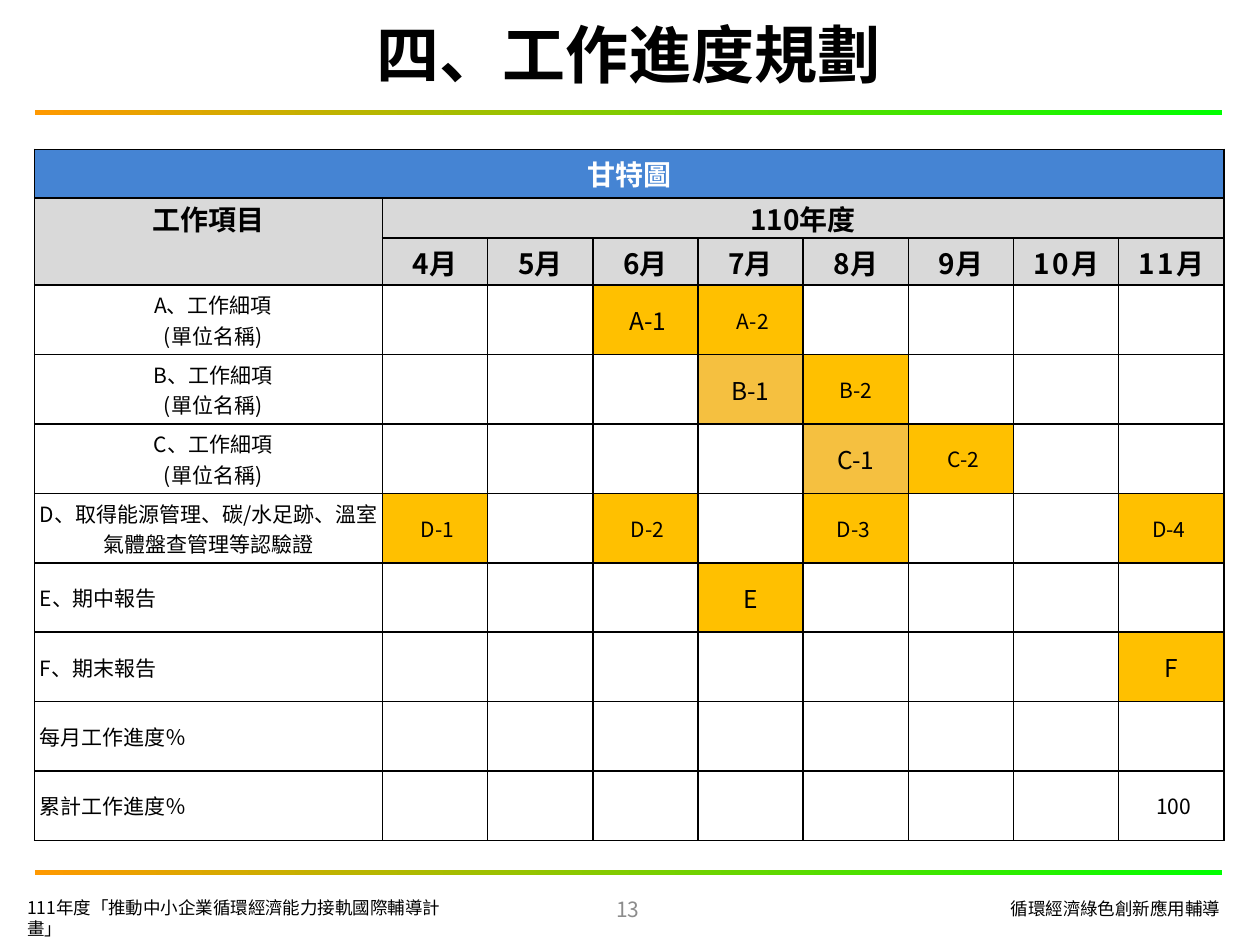
"""Build the work schedule slide with its Gantt table."""
from dataclasses import dataclass
from typing import Optional

import lxml.etree
import pptx
import pptx.dml.color
import pptx.enum.shapes
import pptx.enum.text
import pptx.oxml.ns
import pptx.util

Cm = pptx.util.Cm
Pt = pptx.util.Pt
RGBColor = pptx.dml.color.RGBColor
ALIGN = pptx.enum.text.PP_ALIGN
ANCHOR = pptx.enum.text.MSO_ANCHOR
qn = pptx.oxml.ns.qn

FONT = "Noto Sans CJK SC"
BLACK = RGBColor(0x00, 0x00, 0x00)
WHITE = RGBColor(0xFF, 0xFF, 0xFF)
GRAY = RGBColor(0x8C, 0x8C, 0x8C)
BLUE = RGBColor(0x45, 0x84, 0xD3)
HEADER = RGBColor(0xD9, 0xD9, 0xD9)
GOLD = RGBColor(0xFF, 0xC0, 0x00)
AMBER = RGBColor(0xF5, 0xC0, 0x40)
ORANGE = RGBColor(0xFF, 0x99, 0x00)
GREEN = RGBColor(0x00, 0xFF, 0x00)

ITEM_WIDTH, MONTH_WIDTH = 7.01, 2.12
HEADER_HEIGHTS, TASK_HEIGHT = [0.98, 0.81, 0.95], 1.4
MONTHS = range(4, 12)


@dataclass
class Style:
    size: float
    color: RGBColor = BLACK
    bold: bool = False
    align: ALIGN = ALIGN.CENTER


@dataclass
class Label:
    text: str
    left: float
    top: float
    width: float
    height: float
    style: Style
    anchor: ANCHOR = ANCHOR.TOP


@dataclass
class Mark:
    month: int
    text: str
    size: float = 12
    fill: Optional[RGBColor] = GOLD


@dataclass
class Task:
    name: str
    marks: list[Mark]
    align: ALIGN = ALIGN.LEFT
    indent: float = 0


LABELS = [
    Label("111年度「推動中小企業循環經濟能力接軌國際輔導計畫」", 0.3, 17.96, 9.42, 0.69,
          Style(10, align=ALIGN.LEFT)),
    Label("循環經濟綠色創新應用輔導", 18.69, 17.98, 6.15, 0.69, Style(10, align=ALIGN.RIGHT)),
    Label("四、工作進度規劃", 0, 0.33, 25.35, 1.5, Style(36, bold=True), ANCHOR.MIDDLE),
    Label("13", 9.7, 17.81, 5.92, 1.02, Style(12, GRAY), ANCHOR.MIDDLE),
]

TASKS = [
    Task("A、工作細項\n(單位名稱)", [Mark(6, " A-1", 14), Mark(7, " A-2")], ALIGN.CENTER, 0.18),
    Task("B、工作細項\n(單位名稱)", [Mark(7, "B-1", 14, AMBER), Mark(8, "B-2")], ALIGN.CENTER, 0.18),
    Task("C、工作細項\n(單位名稱)", [Mark(8, "C-1", 14, AMBER), Mark(9, " C-2")], ALIGN.CENTER, 0.18),
    Task("D、取得能源管理、碳/水足跡、溫室氣體盤查管理等認驗證",
         [Mark(4, " D-1"), Mark(6, " D-2"), Mark(8, "D-3 "), Mark(11, "D-4 ")], ALIGN.CENTER),
    Task("E、期中報告", [Mark(7, "E", 14)]),
    Task("F、期末報告", [Mark(11, "F", 14)]),
    Task("每月工作進度％", []),
    Task("累計工作進度％", [Mark(11, " 100", fill=None)]),
]


def format_text(tf, style: Style) -> None:
    for p in tf.paragraphs:
        p.alignment = style.align
        for r in p.runs:
            r.font.name = FONT
            r.font.size = Pt(style.size)
            r.font.bold = style.bold
            r.font.color.rgb = style.color
            latin = r.font._element.find(qn("a:latin"))
            ea = lxml.etree.Element(qn("a:ea"), typeface=FONT)
            latin.addnext(ea)


def add_label(s, label: Label) -> None:
    sp = s.shapes.add_textbox(Cm(label.left), Cm(label.top), Cm(label.width), Cm(label.height))
    tf = sp.text_frame
    tf.word_wrap = True
    tf.vertical_anchor = label.anchor
    tf.text = label.text
    format_text(tf, label.style)


def add_rule(s, top: float) -> None:
    sp = s.shapes.add_shape(pptx.enum.shapes.MSO_SHAPE.RECTANGLE,
                            Cm(0.71), Cm(top), Cm(23.93), Cm(0.12))
    sp.shadow.inherit = False
    sp.line.fill.background()
    sp.fill.gradient()
    sp.fill.gradient_angle = 0
    for stop, color in zip(sp.fill.gradient_stops, (ORANGE, GREEN)):
        stop.color.rgb = color


def prepare_cell(cell, row: int) -> None:
    compact = row == 1
    cell.margin_left = cell.margin_right = Cm(0 if compact else 0.1)
    cell.margin_top = cell.margin_bottom = Cm(0 if compact else 0.08)
    cell.vertical_anchor = ANCHOR.TOP if compact else ANCHOR.MIDDLE
    tcPr = cell._tc.get_or_add_tcPr()
    for side in ("lnL", "lnR", "lnT", "lnB"):
        ln = lxml.etree.SubElement(tcPr, qn("a:" + side), w=str(Pt(1)))
        fill = lxml.etree.SubElement(ln, qn("a:solidFill"))
        lxml.etree.SubElement(fill, qn("a:srgbClr"), val=str(BLACK))
    cell.fill.background()


def write_cell(cell, text: str, style: Style, fill: Optional[RGBColor] = None) -> None:
    cell.text_frame.text = text
    format_text(cell.text_frame, style)
    if fill is not None:
        cell.fill.solid()
        cell.fill.fore_color.rgb = fill


def write_month(cell, month: int, style: Style) -> None:
    write_cell(cell, f"{month}月", style, HEADER)
    if month >= 10:
        p = cell.text_frame.paragraphs[0]
        p.text = str(month)
        p.add_run().text = "月"
        format_text(cell.text_frame, style)
        for r, spacing in zip(p.runs, ("140", "-30")):
            r.font._element.set("spc", spacing)


def add_gantt(s) -> None:
    heights = HEADER_HEIGHTS + [TASK_HEIGHT] * len(TASKS)
    widths = [ITEM_WIDTH] + [MONTH_WIDTH] * len(MONTHS)
    frame = s.shapes.add_table(len(heights), len(widths), Cm(0.7), Cm(3.01),
                               Cm(sum(widths)), Cm(sum(heights)))
    table = frame.table
    table.first_row = table.horz_banding = False
    for column, width in zip(table.columns, widths):
        column.width = Cm(width)
    for i, height in enumerate(heights):
        table.rows[i].height = Cm(height)
        for cell in table.rows[i].cells:
            prepare_cell(cell, i)

    last = len(MONTHS)
    table.cell(0, 0).merge(table.cell(0, last))
    table.cell(1, 0).merge(table.cell(2, 0))
    table.cell(1, 1).merge(table.cell(1, last))
    heading = Style(16, bold=True)
    write_cell(table.cell(0, 0), "甘特圖", Style(16, WHITE, True), BLUE)
    write_cell(table.cell(1, 0), "工作項目", heading, HEADER)
    write_cell(table.cell(1, 1), "110年度", heading, HEADER)
    for j, month in enumerate(MONTHS, 1):
        write_month(table.cell(2, j), month, heading)

    for i, task in enumerate(TASKS, len(HEADER_HEIGHTS)):
        cell = table.cell(i, 0)
        write_cell(cell, task.name, Style(12, align=task.align))
        for p in cell.text_frame.paragraphs:
            p._p.get_or_add_pPr().set("marL", str(Cm(task.indent)))
        for mark in task.marks:
            write_cell(table.cell(i, mark.month - MONTHS[0] + 1), mark.text,
                       Style(mark.size), mark.fill)


def main() -> None:
    prs = pptx.Presentation()
    prs.slide_width, prs.slide_height = Cm(25.4), Cm(19.05)
    s = prs.slides.add_slide(prs.slide_layouts[6])
    for top in (2.21, 17.53):
        add_rule(s, top)
    for label in LABELS:
        add_label(s, label)
    add_gantt(s)
    prs.save("out.pptx")


if __name__ == "__main__":
    main()
